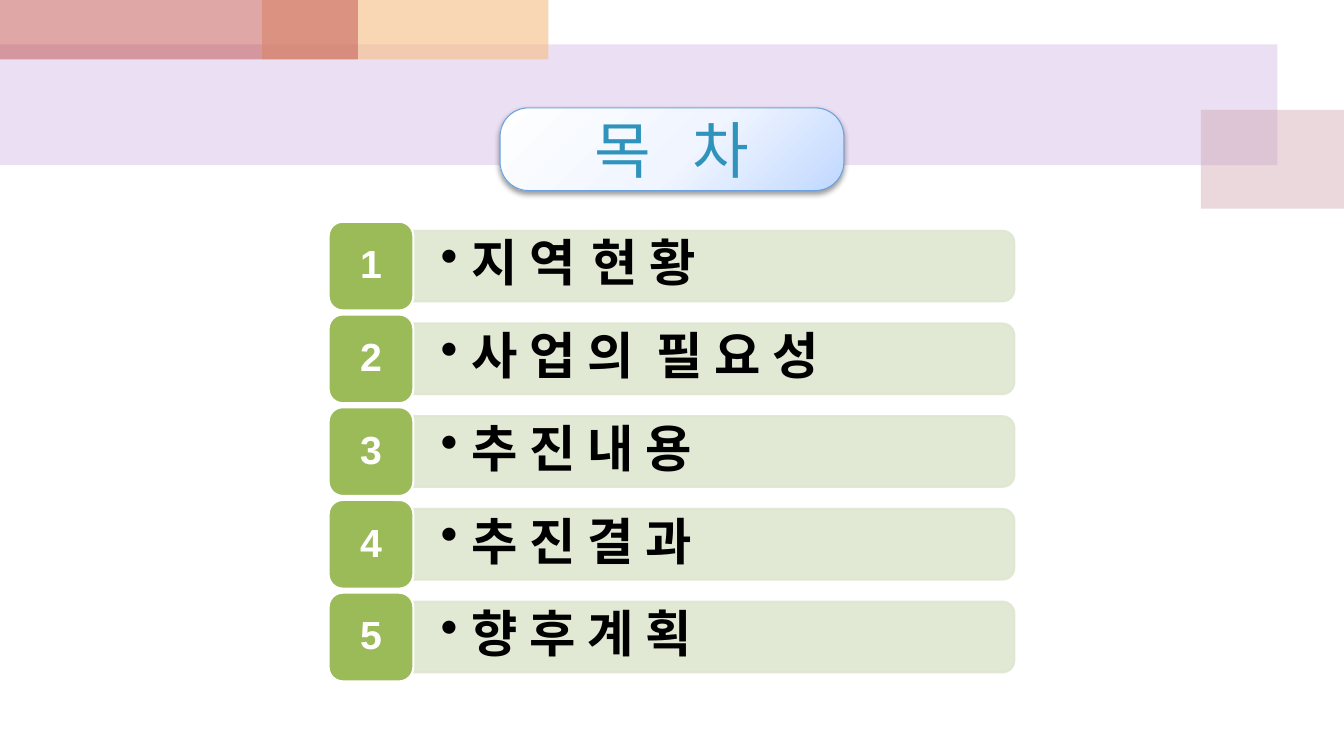
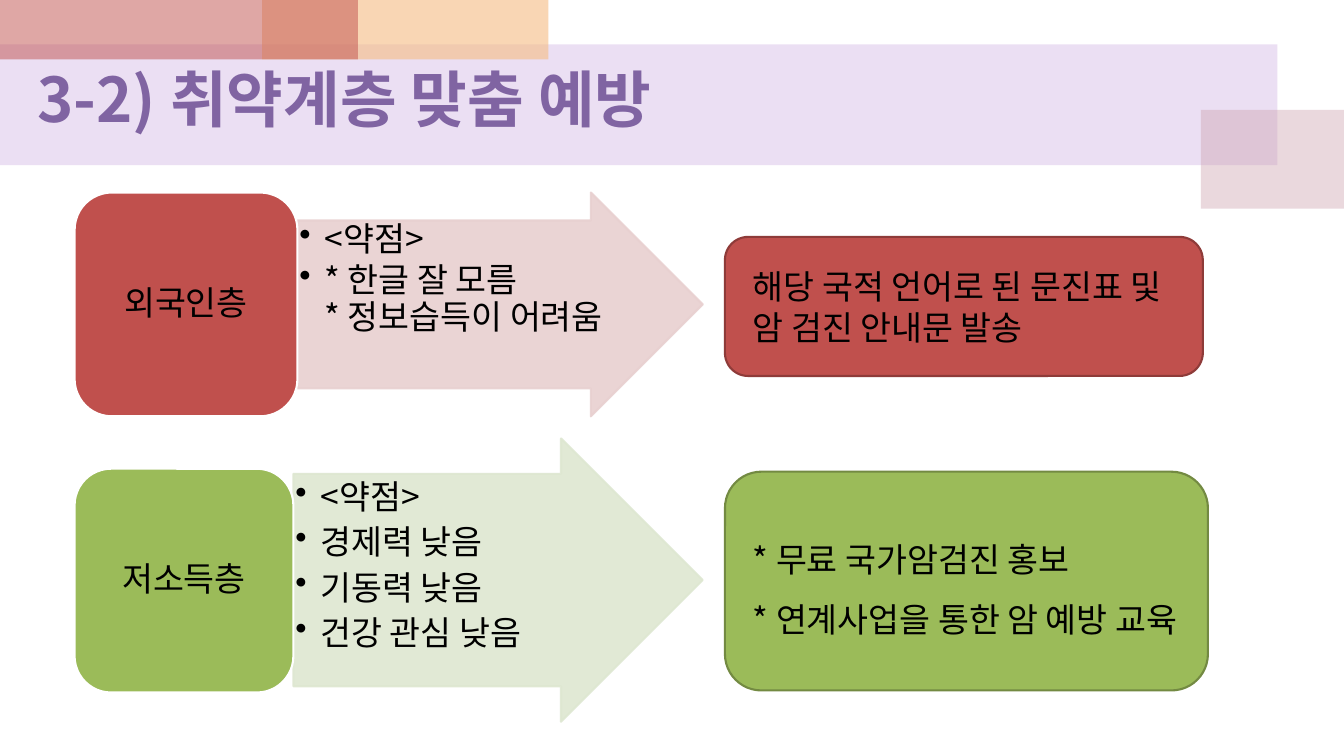
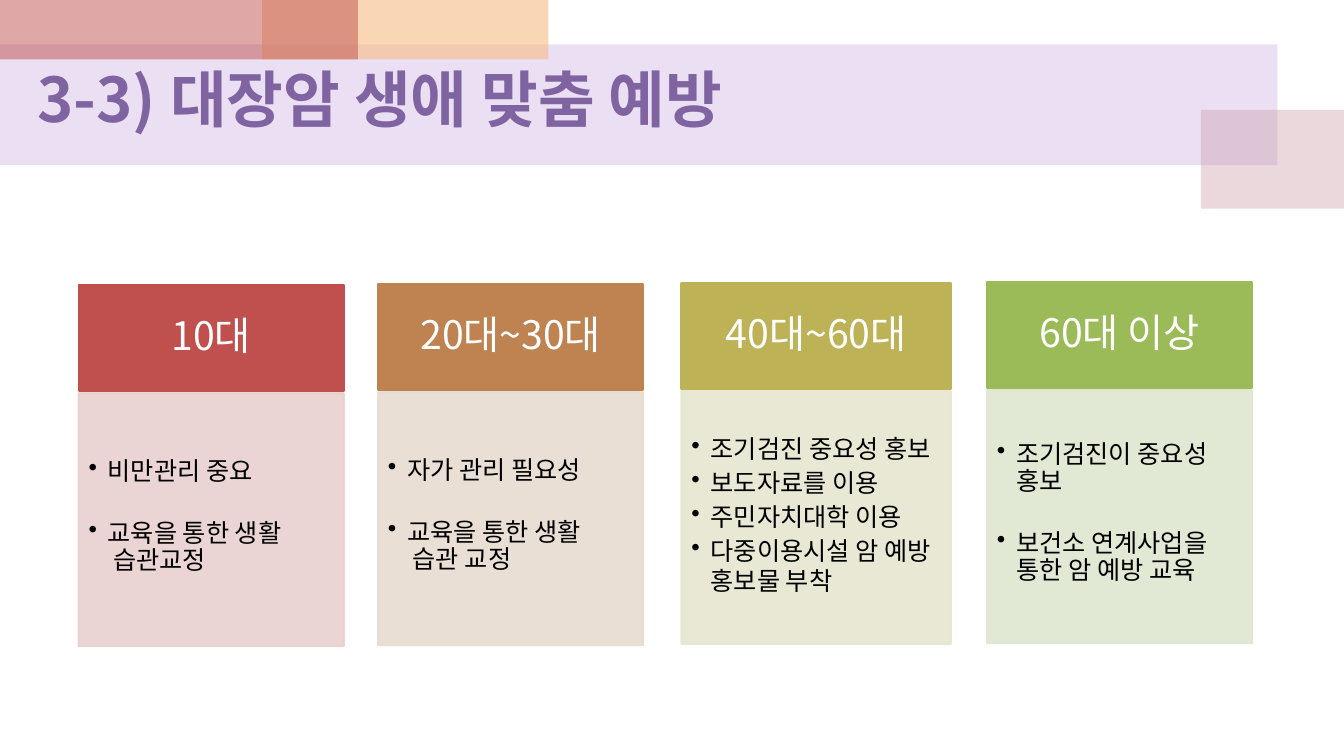
"""Build three slides on regional cancer prevention."""
from lxml import etree
from pptx import Presentation
from pptx.dml.color import RGBColor
from pptx.enum.shapes import MSO_SHAPE
from pptx.enum.text import MSO_ANCHOR, MSO_AUTO_SIZE, PP_ALIGN
from pptx.oxml import parse_xml
from pptx.oxml.ns import nsdecls, qn
from pptx.util import Inches, Pt

RECTANGLE, ROUNDED = MSO_SHAPE.RECTANGLE, MSO_SHAPE.ROUNDED_RECTANGLE
SIDE_ROUNDED, ARROW = MSO_SHAPE.ROUND_2_SAME_RECTANGLE, MSO_SHAPE.RIGHT_ARROW
LEFT, CENTER = PP_ALIGN.LEFT, PP_ALIGN.CENTER
TOP, MIDDLE = MSO_ANCHOR.TOP, MSO_ANCHOR.MIDDLE
NO_AUTOFIT = MSO_AUTO_SIZE.NONE

KOREAN, LATIN = "Noto Sans CJK KR", "Arial"
BLACK, WHITE, PURPLE, TITLE_BLUE = "000000", "FFFFFF", "8064A2", "2F93BC"
RED, GREEN, PALE_RED, PALE_GREEN = "C0504D", "9BBB59", "E8D0D0", "DEE7D1"

BANDS = [
    ((0, 0.44, 12.67, 1.2), "BF98D8", 30),
    ((11.91, 1.09, 1.43, 0.98), "CC9EAC", 40),
    ((2.6, 0, 2.84, 0.59), "F5BC83", 60),
    ((0, 0, 3.55, 0.59), RED, 50),
]
TITLE_BOX = (0.27, 0.58, 9, 0.78)
PILL_BOX = (4.96, 1.07, 3.41, 0.82)
PILL_STOPS = [(0, "FEFEFF"), (55, "F0F5FF"), (100, "C0D8FF")]

CONTENTS = ["지 역\t현 황", "사 업 의  필 요 성", "추 진 내 용", "추 진 결 과", "향 후 계 획"]

GROUPS = [
    {
        "name": "외국인층", "fill": RED, "pale": PALE_RED, "edge": "8E3B39",
        "square": (0.74, 1.91, 2.21, 2.22), "arrow": (2.95, 1.91, 4.02, 2.22),
        "answer": (7.19, 2.35, 4.74, 1.38), "spacing": 0.9,
        "weak": ["<약점>", "* 한글 잘 모름\n* 정보습득이 어려움"],
        "actions": ["해당 국적 언어로 된 문진표 및 암 검진 안내문 발송"],
        "format": {"anchor": MIDDLE, "insets": (0.21, 0.05, 0.1, 0.05)},
    },
    {
        "name": "저소득층", "fill": GREEN, "pale": PALE_GREEN, "edge": "738A42",
        "square": (0.74, 4.65, 2.17, 2.22), "arrow": (2.91, 4.35, 4.06, 2.81),
        "answer": (7.19, 4.68, 4.79, 2.17), "spacing": 1.0,
        "weak": ["<약점>", "경제력 낮음", "기동력 낮음", "건강 관심 낮음"],
        "actions": ["* 무료 국가암검진 홍보", "* 연계사업을 통한 암 예방 교육"],
        "format": {"anchor": TOP, "insets": (0.17, 0.36, 0, 0), "spacing": 1.5},
    },
]

AGES = [
    ("10대", RED, PALE_RED, 0.78, 2.63, 0.9, 22,
     ["비만관리 중요", "교육을 통한 생활\n 습관교정"]),
    ("20대~30대", "BE8351", "E8DCD0", 3.75, 2.63, 0.9, 22,
     ["자가 관리 필요성", "교육을 통한 생활\n 습관 교정"]),
    ("40대~60대", "BDB255", "E7E6D1", 6.76, 2.67, 1.0, 0,
     ["조기검진 중요성 홍보", "보도자료를 이용", "주민자치대학 이용",
      "다중이용시설 암 예방 홍보물 부착"]),
    ("60대 이상", GREEN, PALE_GREEN, 9.79, 2.63, 0.9, 22,
     ["조기검진이 중요성 홍보", "보건소 연계사업을 통한 암 예방 교육"]),
]


def rgb(value):
    """Turn a hex string into a colour."""
    return RGBColor.from_string(value)


def place(shape, box):
    """Move and size a shape in inches."""
    shape.left, shape.top, shape.width, shape.height = map(Inches, box)


def add_box(slide, kind, box, fill, line=None, weight=1.5, alpha=None, adjust=()):
    """Add a preset shape with a flat fill and an optional outline."""
    shape = slide.shapes.add_shape(kind, *map(Inches, box))
    shape.shadow.inherit = False
    shape.fill.solid()
    shape.fill.fore_color.rgb = rgb(fill)
    if line:
        shape.line.color.rgb = rgb(line)
        shape.line.width = Pt(weight)
    else:
        shape.line.fill.background()
    if alpha:
        for color in shape.element.spPr.iter(qn("a:srgbClr")):
            etree.SubElement(color, qn("a:alpha"), val=str(alpha * 1000))
    for index, value in enumerate(adjust):
        shape.adjustments[index] = value
    return shape


def add_bullet(paragraph, indent):
    """Give a paragraph a round bullet with a hanging indent in inches."""
    properties = paragraph._p.get_or_add_pPr()
    properties.set("marL", str(Inches(indent)))
    properties.set("indent", str(-Inches(indent)))
    etree.SubElement(properties, qn("a:buChar"), char="•")


def write(shape, texts, size=24, color=BLACK, font=KOREAN, bold=False, align=LEFT,
          anchor=MIDDLE, insets=(0.1, 0.05, 0.1, 0.05), spacing=1.0, after=0,
          gap=0, bullet=None):
    """Write paragraphs into a shape with one format."""
    frame = shape.text_frame
    frame.word_wrap = True
    frame.auto_size = NO_AUTOFIT
    frame.vertical_anchor = anchor
    (frame.margin_left, frame.margin_top,
     frame.margin_right, frame.margin_bottom) = map(Inches, insets)
    for index, text in enumerate(texts):
        paragraph = frame.add_paragraph() if index else frame.paragraphs[0]
        paragraph.text = text
        if bullet:
            add_bullet(paragraph, bullet)
        paragraph.alignment = align
        paragraph.line_spacing = spacing
        paragraph.space_before = Pt(gap if index else 0)
        paragraph.space_after = Pt(after)
        for run in paragraph.runs:
            run.font.size = Pt(size)
            run.font.bold = bold
            run.font.color.rgb = rgb(color)
            run.font.name = font
    for properties in shape.element.iter(qn("a:rPr")):
        etree.SubElement(properties, qn("a:ea"), typeface=font)


def add_bands(layout, slide):
    """Draw the shared bands and keep them on the layout."""
    for index, (box, fill, alpha) in enumerate(BANDS):
        band = add_box(slide, RECTANGLE, box, fill, alpha=alpha)
        band.element.nvSpPr.cNvPr.set("id", str(20 + index))
        layout.shapes.element.insert(2 + index, band.element)


def add_pill(slide):
    """Add the shaded pill behind the contents heading."""
    pill = add_box(slide, ROUNDED, PILL_BOX, WHITE, "6BA2DF", 0.75, adjust=[0.344])
    stops = "".join(
        f'<a:gs pos="{position * 1000}"><a:srgbClr val="{color}"/></a:gs>'
        for position, color in PILL_STOPS)
    gradient = parse_xml(
        f'<a:gradFill {nsdecls("a")}><a:gsLst>{stops}</a:gsLst><a:path path="circle">'
        '<a:fillToRect l="-40000" t="-90000" r="140000" b="190000"/></a:path></a:gradFill>')
    properties = pill.element.spPr
    properties.replace(properties.find(qn("a:solidFill")), gradient)
    shadow = etree.SubElement(
        properties.find(qn("a:effectLst")), qn("a:outerShdw"), blurRad=str(Pt(4)),
        dist=str(Pt(2)), dir="5400000", rotWithShape="0")
    color = etree.SubElement(shadow, qn("a:srgbClr"), val=BLACK)
    etree.SubElement(color, qn("a:alpha"), val="40000")


def build_contents(slide):
    """Build the numbered contents list."""
    add_pill(slide)
    title = slide.shapes.title
    place(title, PILL_BOX)
    slide.shapes.element.append(title.element)
    write(title, ["목   차"], size=44, color=TITLE_BLUE, align=CENTER)
    left, top, pitch = 4.1, 2.2, 0.92
    length, thickness, number_width, number_height = 5.96, 0.7, 0.84, 0.88
    for index, text in enumerate(CONTENTS):
        row_top = top + index * pitch
        middle = row_top + number_height / 2
        bar = add_box(slide, SIDE_ROUNDED,
                      (left + (length - thickness) / 2, middle - length / 2, thickness, length),
                      PALE_GREEN, PALE_GREEN, alpha=90)
        bar.rotation = 90
        label = slide.shapes.add_textbox(
            *map(Inches, (left, middle - 0.32, length, 0.63)))
        write(label, [text], size=36, bold=True, spacing=0.9, bullet=0.31,
              insets=(0.27, 0.14, 0.27, 0.14))
        number = add_box(slide, ROUNDED,
                         (left - number_width, row_top, number_width, number_height),
                         GREEN, WHITE)
        write(number, [str(index + 1)], size=28, color=WHITE, font=LATIN, bold=True,
              align=CENTER, spacing=0.9)


def build_groups(slide):
    """Build one row of square, arrow and answer for each group."""
    for group in GROUPS:
        answer = add_box(slide, ROUNDED, group["answer"], group["fill"], group["edge"])
        write(answer, group["actions"], **group["format"])
        arrow = add_box(slide, ARROW, group["arrow"], group["pale"], group["pale"],
                        alpha=90, adjust=[0.75, 0.5])
        write(arrow, group["weak"], anchor=TOP, insets=[0.02] * 4,
              spacing=group["spacing"], after=3.6, bullet=0.25)
        square = add_box(slide, ROUNDED, group["square"], group["fill"], WHITE)
        write(square, [group["name"]], align=CENTER, spacing=0.9)


def build_ages(slide):
    """Build one headed column for each age group."""
    head_height, body_height, step = 1.05, 2.51, 0.01
    for index, (name, fill, pale, left, width, spacing, gap, points) in enumerate(AGES):
        top = 2.83 - index * step
        head = add_box(slide, RECTANGLE, (left, top, width, head_height), fill, fill)
        write(head, [name], size=28, color=WHITE, align=CENTER, spacing=0.9)
        body = add_box(slide, RECTANGLE, (left, top + head_height + 0.02, width, body_height),
                       pale, pale, alpha=90)
        write(body, points, size=18, spacing=spacing, after=2.7, gap=gap, bullet=0.19,
              insets=(0.1, 0.1, 0.14, 0.16))


SLIDES = [
    (None, build_contents),
    ("3-2) 취약계층 맞춤 예방", build_groups),
    ("3-3) 대장암 생애 맞춤 예방", build_ages),
]


def main():
    """Build and save the presentation."""
    presentation = Presentation()
    presentation.slide_width, presentation.slide_height = Inches(13.33), Inches(7.5)
    layout = presentation.slide_layouts[5]
    place(layout.placeholders[0], TITLE_BOX)
    for index, (title, build) in enumerate(SLIDES):
        slide = presentation.slides.add_slide(layout)
        if index == 0:
            add_bands(layout, slide)
        if title:
            place(slide.shapes.title, TITLE_BOX)
            write(slide.shapes.title, [title], size=44, color=PURPLE, bold=True)
        build(slide)
    presentation.save("out.pptx")


if __name__ == "__main__":
    main()
